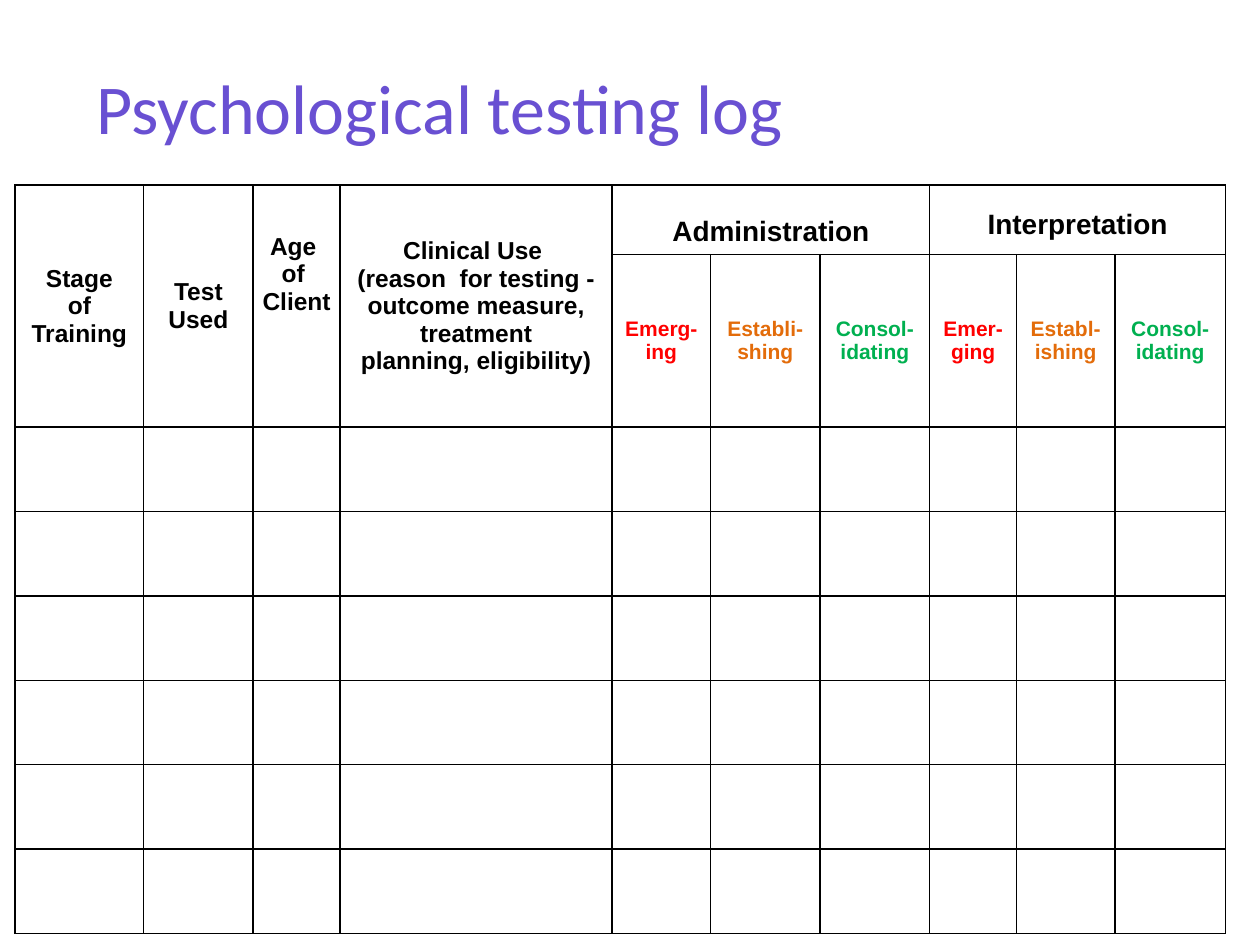
"""Build the psychological testing log slide."""
from lxml import etree
from pptx import Presentation
from pptx.dml.color import RGBColor
from pptx.enum.text import MSO_ANCHOR, PP_ALIGN
from pptx.oxml.ns import qn
from pptx.util import Inches, Pt

MIDDLE, TOP = MSO_ANCHOR.MIDDLE, MSO_ANCHOR.TOP
CENTER = PP_ALIGN.CENTER

BLACK, RED, ORANGE, GREEN = "000000", "FF0000", "E36C0A", "00B050"
TITLE = "Psychological testing log"
COLUMN_WIDTHS = [1.02, 0.87, 0.69, 2.16, 0.78, 0.87, 0.87, 0.69, 0.78, 0.88]
HEADER_HEIGHTS = [0.55, 1.37]
LOG_ROWS, LOG_HEIGHT = 6, 0.67
TABLE_LEFT, TABLE_TOP = 0.12, 1.47
LEVEL_COLORS = [RED, ORANGE, GREEN]

FIELDS = [
    ("Stage\nof\nTraining", MIDDLE, 0),
    ("Test Used", MIDDLE, 0),
    ("Age \nof \nClient", TOP, 0.38),
    ("Clinical Use \n(reason  for testing - outcome measure, treatment\n"
     "planning, eligibility)", MIDDLE, 0),
]
SKILLS = [
    ("Administration", 0.25, ["Emerg-ing", "Establi-\nshing", "Consol-idating"]),
    ("Interpretation", 0.19, ["Emer-ging", "Establ-\nishing", "Consol-idating"]),
]


def rgb(color):
    return RGBColor.from_string(color)


def style_font(font, **values):
    for name, value in values.items():
        setattr(font, name, value)


def add_borders(cell, color=BLACK, width=1):
    properties = cell._tc.get_or_add_tcPr()
    for side in ("a:lnL", "a:lnR", "a:lnT", "a:lnB"):
        line = etree.SubElement(properties, qn(side), w=str(Pt(width)))
        fill = etree.SubElement(line, qn("a:solidFill"))
        etree.SubElement(fill, qn("a:srgbClr"), val=color)


def write_heading(cell, text, size, color=BLACK, anchor=MIDDLE, top=0):
    cell.text = text
    layout = {
        "vertical_anchor": anchor,
        "margin_left": Inches(0.06),
        "margin_right": Inches(0.06),
        "margin_top": Inches(top),
        "margin_bottom": 0,
    }
    for name, value in layout.items():
        setattr(cell, name, value)
    for paragraph in cell.text_frame.paragraphs:
        paragraph.alignment = CENTER
        for run in paragraph.runs:
            style_font(run.font, name="Arial", size=Pt(size), bold=True)
            run.font.color.rgb = rgb(color)


def add_title(slide):
    box = slide.shapes.add_textbox(*map(Inches, (0.67, 0.22, 8.74, 1.25)))
    frame = box.text_frame
    frame.word_wrap = True
    frame.vertical_anchor = MIDDLE
    run = frame.paragraphs[0].add_run()
    run.text = TITLE
    style_font(run.font, name="Calibri", size=Pt(40))
    run.font.color.rgb = rgb("6950D2")


def add_log(slide):
    heights = HEADER_HEIGHTS + [LOG_HEIGHT] * LOG_ROWS
    log = slide.shapes.add_table(
        len(heights), len(COLUMN_WIDTHS), Inches(TABLE_LEFT), Inches(TABLE_TOP),
        Inches(sum(COLUMN_WIDTHS)), Inches(sum(heights))).table
    log.first_row = log.horz_banding = False
    for column, width in zip(log.columns, COLUMN_WIDTHS):
        column.width = Inches(width)
    for row, height in zip(log.rows, heights):
        row.height = Inches(height)
    for cell in log.iter_cells():
        add_borders(cell)
        cell.fill.background()

    for column, (text, anchor, top) in enumerate(FIELDS):
        field = log.cell(0, column)
        field.merge(log.cell(1, column))
        write_heading(field, text, 14, anchor=anchor, top=top)

    for group, (skill, top, levels) in enumerate(SKILLS):
        first = len(FIELDS) + group * len(levels)
        heading = log.cell(0, first)
        heading.merge(log.cell(0, first + len(levels) - 1))
        write_heading(heading, skill, 16, anchor=TOP, top=top)
        for offset, (level, color) in enumerate(zip(levels, LEVEL_COLORS)):
            write_heading(log.cell(1, first + offset), level, 12, color)


def main():
    deck = Presentation()
    deck.slide_width, deck.slide_height = Inches(10), Inches(7.5)
    slide = deck.slides.add_slide(deck.slide_layouts[6])
    add_title(slide)
    add_log(slide)
    deck.save("out.pptx")


if __name__ == "__main__":
    main()
